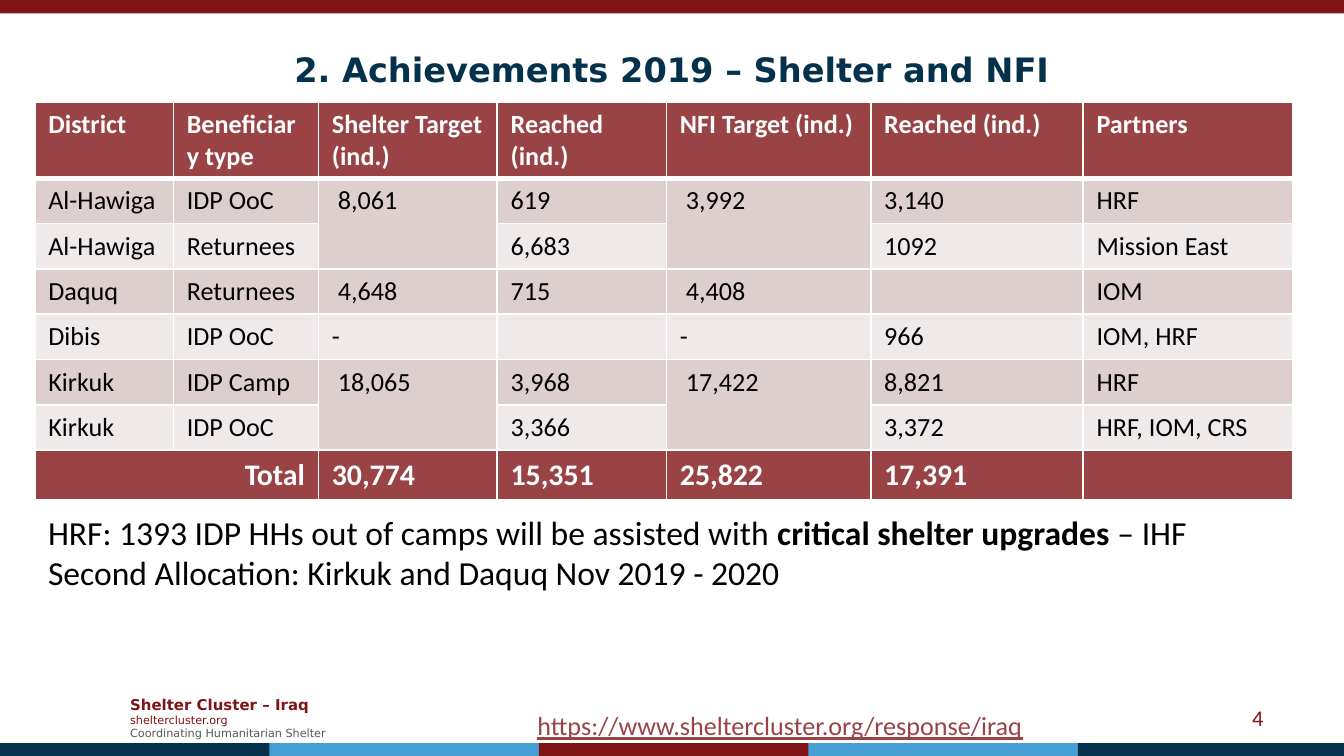
from lxml import etree
from pptx import Presentation
from pptx.dml.color import RGBColor
from pptx.enum.shapes import MSO_SHAPE
from pptx.enum.text import MSO_ANCHOR, PP_ALIGN
from pptx.oxml.ns import qn
from pptx.util import Inches, Pt

RECTANGLE = MSO_SHAPE.RECTANGLE
MIDDLE, TOP = MSO_ANCHOR.MIDDLE, MSO_ANCHOR.TOP
LEFT, CENTER, RIGHT = PP_ALIGN.LEFT, PP_ALIGN.CENTER, PP_ALIGN.RIGHT
TITLE_ONLY = 5

COLORS = {
    "maroon": "7F1416", "navy": "04314C", "sky": "459FD5",
    "brick": "994345", "rose": "DECFCF", "blush": "EFE9E9",
    "grey": "595959", "black": "000000", "white": "FFFFFF",
}
BODY_FONT, BRAND_FONT = "Calibri", "DejaVu Sans"

COLUMN_WIDTHS = [1.03, 1.08, 1.33, 1.26, 1.52, 1.58, 1.56]
HEADER_HEIGHT, BODY_HEIGHT = 0.55, 2.36
ACHIEVEMENTS = [
    ["District", "Beneficiary type", "Shelter Target\n(ind.)", "Reached (ind.)",
     "NFI Target (ind.)", "Reached (ind.)", "Partners"],
    ["Al-Hawiga", "IDP OoC", " 8,061", "619", " 3,992", "3,140", "HRF"],
    ["Al-Hawiga", "Returnees", "", "6,683", "", "1092", "Mission East"],
    ["Daquq", "Returnees", " 4,648", "715", " 4,408", "", "IOM"],
    ["Dibis", "IDP OoC", "-", "", "-", "966", "IOM, HRF"],
    ["Kirkuk", "IDP Camp", " 18,065", "3,968", " 17,422", "8,821", "HRF"],
    ["Kirkuk", "IDP OoC", "", "3,366", "", "3,372", "HRF, IOM, CRS"],
    ["Total", "", "30,774", "15,351", "25,822", "17,391", ""],
]
MERGES = [((row, column), (row + 1, column)) for row in (1, 5) for column in (2, 4)]
MERGES.append(((7, 0), (7, 1)))


def rgb(name):
    return RGBColor.from_string(COLORS[name])


def add_run(paragraph, text, size, color, font=BODY_FONT, bold=False, underline=False):
    run = paragraph.add_run()
    run.text = text
    run.font.size = Pt(size)
    run.font.name = font
    run.font.bold = bold
    run.font.underline = underline
    run.font.color.rgb = rgb(color)


def add_text(slide, box, lines, align=LEFT, anchor=TOP, wrap=True):
    frame = slide.shapes.add_textbox(*map(Inches, box)).text_frame
    frame.word_wrap = wrap
    frame.vertical_anchor = anchor
    for index, runs in enumerate(lines):
        paragraph = frame.add_paragraph() if index else frame.paragraphs[0]
        paragraph.alignment = align
        for run in runs:
            add_run(paragraph, **run)


def add_band(slide, left, top, width, color):
    band = slide.shapes.add_shape(
        RECTANGLE, Inches(left), Inches(top), Inches(width), Inches(0.1))
    band.shadow.inherit = False
    band.fill.solid()
    band.fill.fore_color.rgb = rgb(color)
    band.line.fill.background()


def add_bands(slide):
    add_band(slide, 0, 0, 10, "maroon")
    for index, color in enumerate(["navy", "sky", "maroon", "sky", "navy"]):
        add_band(slide, index * 2.005, 5.53, 2.01, color)


def add_title(slide, text):
    title = slide.shapes.title
    title.left, title.top = Inches(0.5), Inches(0.23)
    title.width, title.height = Inches(9), Inches(0.57)
    title.text_frame.vertical_anchor = MIDDLE
    paragraph = title.text_frame.paragraphs[0]
    paragraph.alignment = CENTER
    add_run(paragraph, text, 18, "navy", BRAND_FONT, bold=True)


def set_borders(cell, widths):
    properties = cell._tc.get_or_add_tcPr()
    for index, (side, width) in enumerate(widths.items()):
        line = etree.Element(qn(f"a:{side}"), w=str(Pt(width)))
        fill = etree.SubElement(line, qn("a:solidFill"))
        etree.SubElement(fill, qn("a:srgbClr"), val=COLORS["white"])
        properties.insert(index, line)


def fill_cell(cell, text, size, color, fill, bold, align):
    cell.fill.solid()
    cell.fill.fore_color.rgb = rgb(fill)
    for index, line in enumerate(text.split("\n")):
        frame = cell.text_frame
        paragraph = frame.add_paragraph() if index else frame.paragraphs[0]
        paragraph.alignment = align
        if line:
            add_run(paragraph, line, size, color, bold=bold)
        else:
            etree.SubElement(paragraph._p, qn("a:endParaRPr"), sz=str(size * 100))


def add_achievements(slide):
    last = len(ACHIEVEMENTS) - 1
    table = slide.shapes.add_table(
        len(ACHIEVEMENTS), len(COLUMN_WIDTHS), Inches(0.26), Inches(0.76),
        Inches(sum(COLUMN_WIDTHS)), Inches(HEADER_HEIGHT + BODY_HEIGHT)).table
    for column, width in zip(table.columns, COLUMN_WIDTHS):
        column.width = Inches(width)
    for row, values in enumerate(ACHIEVEMENTS):
        table.rows[row].height = Inches(BODY_HEIGHT / last if row else HEADER_HEIGHT)
        strong = row in (0, last)
        fill = "brick" if strong else "rose" if row % 2 else "blush"
        borders = {"lnL": 1, "lnR": 1, "lnT": 3 if row == 1 else 1,
                   "lnB": 1 if row else 3}
        for column, value in enumerate(values):
            cell = table.cell(row, column)
            fill_cell(cell, value, 16 if row == last else 14,
                      "white" if strong else "black", fill, strong,
                      RIGHT if value == "Total" else LEFT)
            set_borders(cell, borders)
    for start, end in MERGES:
        table.cell(*start).merge(table.cell(*end))


def main():
    deck = Presentation()
    deck.slide_width = Inches(10)
    deck.slide_height = deck.slide_width * 9 // 16
    slide = deck.slides.add_slide(deck.slide_layouts[TITLE_ONLY])

    add_bands(slide)
    add_text(slide, (0.87, 5.12, 1.73, 0.44), [
        [dict(text="Shelter Cluster – Iraq", size=8, color="maroon",
              font=BRAND_FONT, bold=True)],
        [dict(text="sheltercluster.org", size=6, color="maroon", font=BRAND_FONT)],
        [dict(text="Coordinating Humanitarian Shelter", size=6, color="grey",
              font=BRAND_FONT)],
    ], anchor=MIDDLE)
    add_text(slide, (7.17, 5.19, 2.33, 0.3),
             [[dict(text="4", size=12, color="maroon")]], RIGHT, MIDDLE)
    add_text(slide, (3.9, 5.23, 3.85, 0.34), [
        [dict(text="https://www.sheltercluster.org/response/iraq", size=14,
              color="brick", underline=True)],
    ], wrap=False)
    add_achievements(slide)
    add_text(slide, (0.26, 3.76, 9.36, 0.71), [[
        dict(text="HRF: 1393 IDP HHs out of camps will be assisted with ",
             size=18, color="black"),
        dict(text="critical shelter upgrades ", size=18, color="black", bold=True),
        dict(text="– IHF Second Allocation: Kirkuk and Daquq Nov 2019 - 2020",
             size=18, color="black"),
    ]])
    add_title(slide, "2. Achievements 2019 – Shelter and NFI")
    deck.save("out.pptx")


if __name__ == "__main__":
    main()
